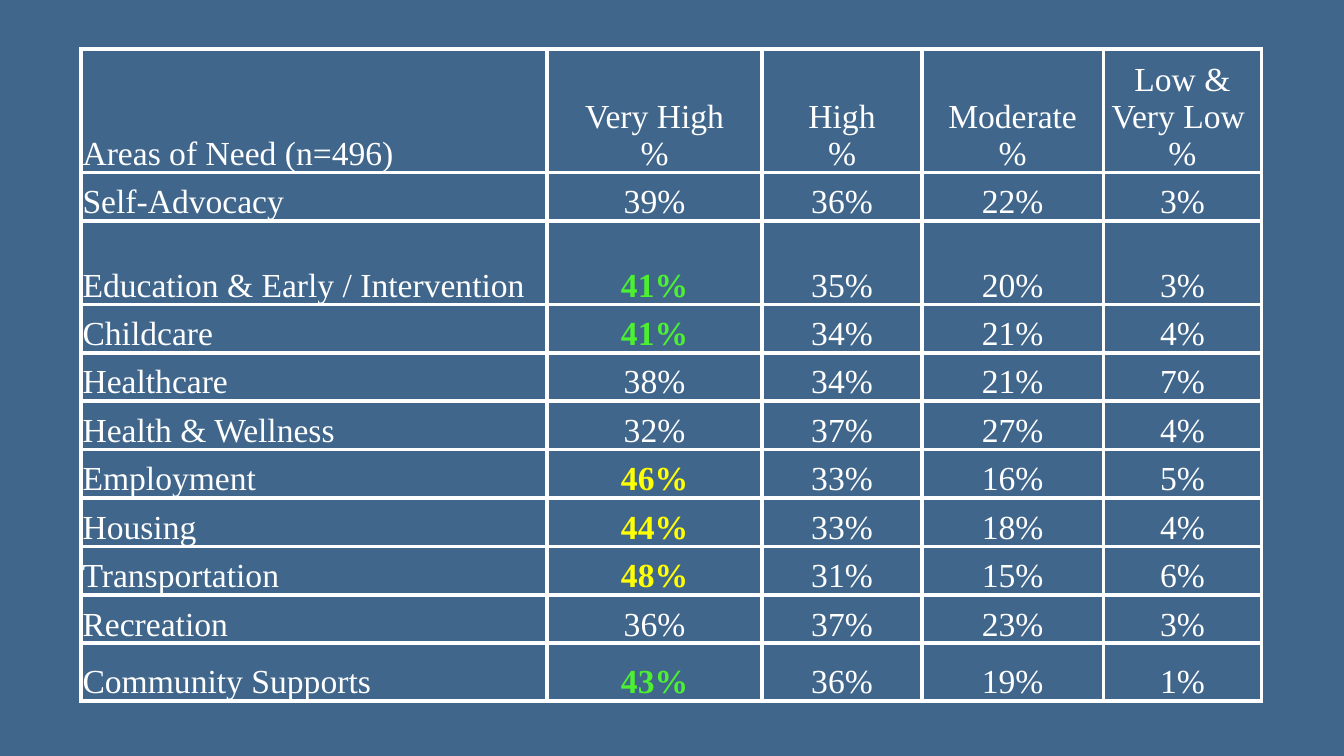
from lxml.etree import SubElement
from pptx import Presentation
from pptx.dml.color import RGBColor as RGB
from pptx.enum.text import MSO_ANCHOR as ANCHOR, PP_ALIGN as ALIGN
from pptx.oxml.ns import qn
from pptx.util import Cm, Pt

COLORS = {"back": "40668C", "white": "FFFFFF", "green": "4BF030", "yellow": "FFFF00"}
FONT = "Times New Roman"

# Table content: header, then one row per area of need
HEADER = ["Areas of Need (n=496)", "Very High\n%", "High\n%", "Moderate\n%",
          "Low & Very Low \n%"]
NEEDS = [
    ("Self-Advocacy", 39, 36, 22, 3),
    ("Education & Early / Intervention", 41, 35, 20, 3),
    ("Childcare", 41, 34, 21, 4),
    ("Healthcare", 38, 34, 21, 7),
    ("Health & Wellness", 32, 37, 27, 4),
    ("Employment", 46, 33, 16, 5),
    ("Housing", 44, 33, 18, 4),
    ("Transportation", 48, 31, 15, 6),
    ("Recreation", 36, 37, 23, 3),
    ("Community Supports", 43, 36, 19, 1),
]
ROWS = [HEADER] + [[area] + [f"{v}%" for v in values] for area, *values in NEEDS]
COL_WIDTHS = [11.73, 5.43, 4.02, 4.58, 3.98]
ROW_HEIGHTS = [3.12, 1.22, 2.1] + [1.22] * 7 + [1.45]

# Very high needs stand out from 40% (green) and from 44% (yellow)
HIGHLIGHTS = {f"{v}%": "yellow" if v >= 44 else "green" for v in range(40, 101)}


def add_borders(cell):
    tcPr = cell._tc.get_or_add_tcPr()
    for side in ("a:lnL", "a:lnR", "a:lnT", "a:lnB"):
        ln = SubElement(tcPr, qn(side), w=str(Pt(3)))
        fill = SubElement(ln, qn("a:solidFill"))
        SubElement(fill, qn("a:srgbClr"), val=COLORS["white"])


# Slide and background
prs = Presentation()
prs.slide_width, prs.slide_height = Cm(33.87), Cm(19.05)
s = prs.slides.add_slide(prs.slide_layouts[6])
s.background.fill.solid()
s.background.fill.fore_color.rgb = RGB.from_string(COLORS["back"])

# Table grid
table = s.shapes.add_table(len(ROWS), len(HEADER), Cm(2.05), Cm(1.23),
                           Cm(sum(COL_WIDTHS)), Cm(sum(ROW_HEIGHTS))).table
table.first_row = table.horz_banding = False
for column, width in zip(table.columns, COL_WIDTHS):
    column.width = Cm(width)
for row, height in zip(table.rows, ROW_HEIGHTS):
    row.height = Cm(height)

# Cells
for i, texts in enumerate(ROWS):
    for j, text in enumerate(texts):
        cell = table.cell(i, j)
        add_borders(cell)
        cell.fill.background()
        cell.vertical_anchor = ANCHOR.BOTTOM
        cell.margin_left = cell.margin_right = cell.margin_top = Cm(0.03)
        cell.margin_bottom = 0
        cell.text_frame.text = text
        for p in cell.text_frame.paragraphs:
            p.alignment = ALIGN.CENTER if j else ALIGN.LEFT
            for r in p.runs:
                r.font.name, r.font.size = FONT, Pt(24)
                r.font.bold = text in HIGHLIGHTS
                r.font.color.rgb = RGB.from_string(COLORS[HIGHLIGHTS.get(text, "white")])

prs.save("out.pptx")
